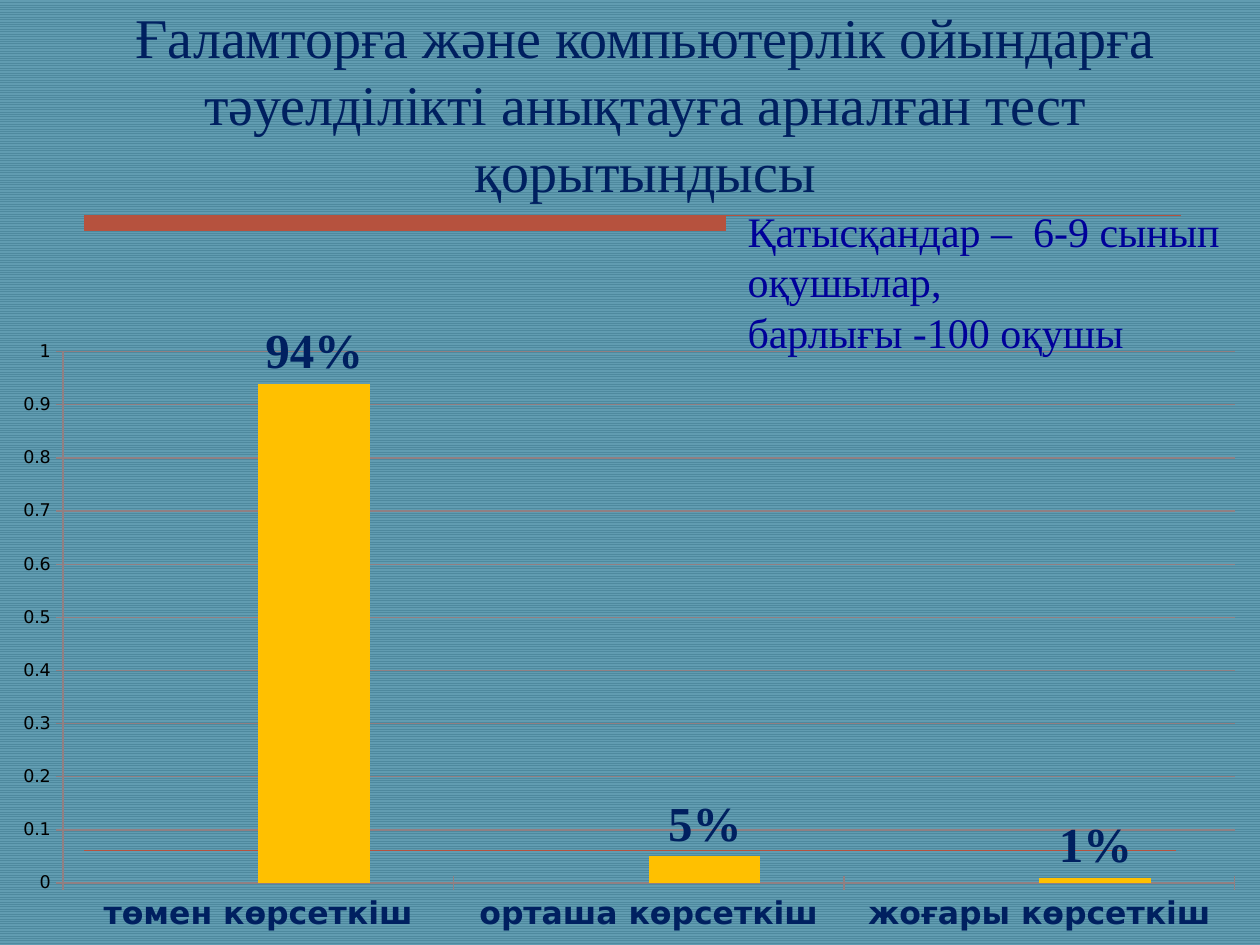
from lxml import etree
from pptx import Presentation
from pptx.chart.data import CategoryChartData as ChartData
from pptx.dml.color import RGBColor as RGB
from pptx.enum.chart import XL_CHART_TYPE as Kind
from pptx.enum.chart import XL_LABEL_POSITION as Spot
from pptx.enum.chart import XL_TICK_MARK as Tick
from pptx.enum.dml import MSO_PATTERN as Pattern
from pptx.enum.shapes import MSO_CONNECTOR as Link
from pptx.enum.text import MSO_ANCHOR as Anchor
from pptx.enum.text import PP_ALIGN as Align
from pptx.oxml.ns import qn
from pptx.util import Cm, Pt

COLORS = {
    "stripe": "4E899E",
    "ground": "619CB1",
    "rust": "B6523E",
    "grid": "917F82",
    "navy": "002060",
    "blue": "000099",
    "black": "000000",
    "yellow": "FFCC00",
    "gold": "FFC000",
}
SERIF = "Times New Roman"
SANS = "DejaVu Sans"


def color(name):
    return RGB.from_string(COLORS[name])


def style(font, size, name, face, bold=False):
    font.size = Pt(size)
    font.color.rgb = color(name)
    font.name = face
    font.bold = bold


def paint_ground(slide):
    fill = slide.background.fill
    fill.patterned()
    fill.pattern = Pattern.LIGHT_HORIZONTAL
    fill.fore_color.rgb = color("stripe")
    fill.back_color.rgb = color("ground")


def add_bar(slide):
    # Thick bar with a thin line running on from its top edge
    left, top, mid, right, low = (Cm(n) for n in (1.7, 4.34, 14.63, 23.8, 4.65))
    pen = slide.shapes.build_freeform(left, top)
    pen.add_line_segments([(mid, top), (mid, low), (left, low)], close=True)
    pen.move_to(left, top)
    pen.add_line_segments([(right, top)], close=False)
    bar = pen.convert_to_shape()
    bar.shadow.inherit = False
    bar.fill.solid()
    bar.fill.fore_color.rgb = color("rust")
    bar.line.color.rgb = color("rust")
    bar.line.width = Pt(0.75)


def add_rule(slide, left, right, top):
    rule = slide.shapes.add_connector(
        Link.STRAIGHT, Cm(left), Cm(top), Cm(right), Cm(top))
    rule.line.color.rgb = color("rust")
    rule.line.width = Pt(0.25)
    etree.SubElement(rule._element.spPr, qn("a:effectLst"))


def add_text(slide, box, lines, size, name, align=Align.LEFT, anchor=Anchor.TOP):
    frame = slide.shapes.add_textbox(*(Cm(n) for n in box)).text_frame
    frame.word_wrap = True
    frame.vertical_anchor = anchor
    for i, line in enumerate(lines):
        para = frame.paragraphs[0] if i == 0 else frame.add_paragraph()
        para.alignment = align
        run = para.add_run()
        run.text = line
        style(run.font, size, name, SERIF)


def set_plot(chart, **place):
    # Fix the inner plot area as shares of the chart frame
    area = chart._chartSpace.chart.plotArea
    for old in area.findall(qn("c:layout")):
        area.remove(old)
    layout = etree.Element(qn("c:layout"))
    area.insert(0, layout)
    manual = etree.SubElement(layout, qn("c:manualLayout"))
    parts = {"layoutTarget": "inner", "xMode": "edge", "yMode": "edge", **place}
    for tag, val in parts.items():
        etree.SubElement(manual, qn("c:" + tag)).set("val", str(val))


def set_axes(chart):
    cat, val = chart.category_axis, chart.value_axis
    for axis in (cat, val):
        axis.major_tick_mark = Tick.CROSS
        axis.format.line.color.rgb = color("grid")
    style(cat.tick_labels.font, 18, "navy", SANS, True)
    style(val.tick_labels.font, 10, "black", SANS)
    val.minimum_scale, val.maximum_scale, val.major_unit = 0, 1, 0.1
    val.has_major_gridlines = True
    val.major_gridlines.format.line.color.rgb = color("grid")


def add_chart(slide):
    data = ChartData()
    data.categories = ["төмен көрсеткіш", "орташа көрсеткіш", "жоғары көрсеткіш"]
    data.add_series("Series 1", [None] * 3)
    data.add_series("Series 2", [0.94, 0.05, 0.01])
    chart = slide.shapes.add_chart(
        Kind.COLUMN_CLUSTERED, Cm(0), Cm(6.55), Cm(25.4), Cm(12.5), data).chart
    chart.has_legend = False
    chart.has_title = False
    style(chart.font, 10, "black", SANS)
    set_axes(chart)
    set_plot(chart, x=0.05, y=0.04, w=0.93, h=0.86)

    # Columns and their labels
    plot = chart.plots[0]
    plot.vary_by_categories = False
    plot.gap_width = 150
    plot.overlap = 0
    for item, name in zip(plot.series, ("yellow", "gold")):
        item.format.fill.solid()
        item.format.fill.fore_color.rgb = color(name)
    labels = plot.series[1].data_labels
    labels.show_value = True
    labels.number_format = "0%"
    labels.number_format_is_linked = False
    labels.position = Spot.OUTSIDE_END
    style(labels.font, 28, "navy", SERIF, True)


def main():
    deck = Presentation()
    deck.slide_width, deck.slide_height = Cm(25.4), Cm(19.05)
    slide = deck.slides.add_slide(deck.slide_layouts[6])

    # Backdrop
    paint_ground(slide)
    add_bar(slide)
    add_rule(slide, 1.7, 23.7, 17.15)

    # Title
    title = ("Ғаламторға және компьютерлік ойындарға "
             "тәуелділікті анықтауға арналған тест қорытындысы")
    add_text(slide, (1.9, 2.12, 22.23, 2.12), [title], 32, "navy",
             Align.CENTER, Anchor.BOTTOM)

    # Results and who took part
    add_chart(slide)
    note = ["Қатысқандар –  6-9 сынып оқушылар,", "барлығы -100 оқушы"]
    add_text(slide, (14.82, 4.02, 10.58, 3.33), note, 24, "blue")

    deck.save("out.pptx")


if __name__ == "__main__":
    main()
